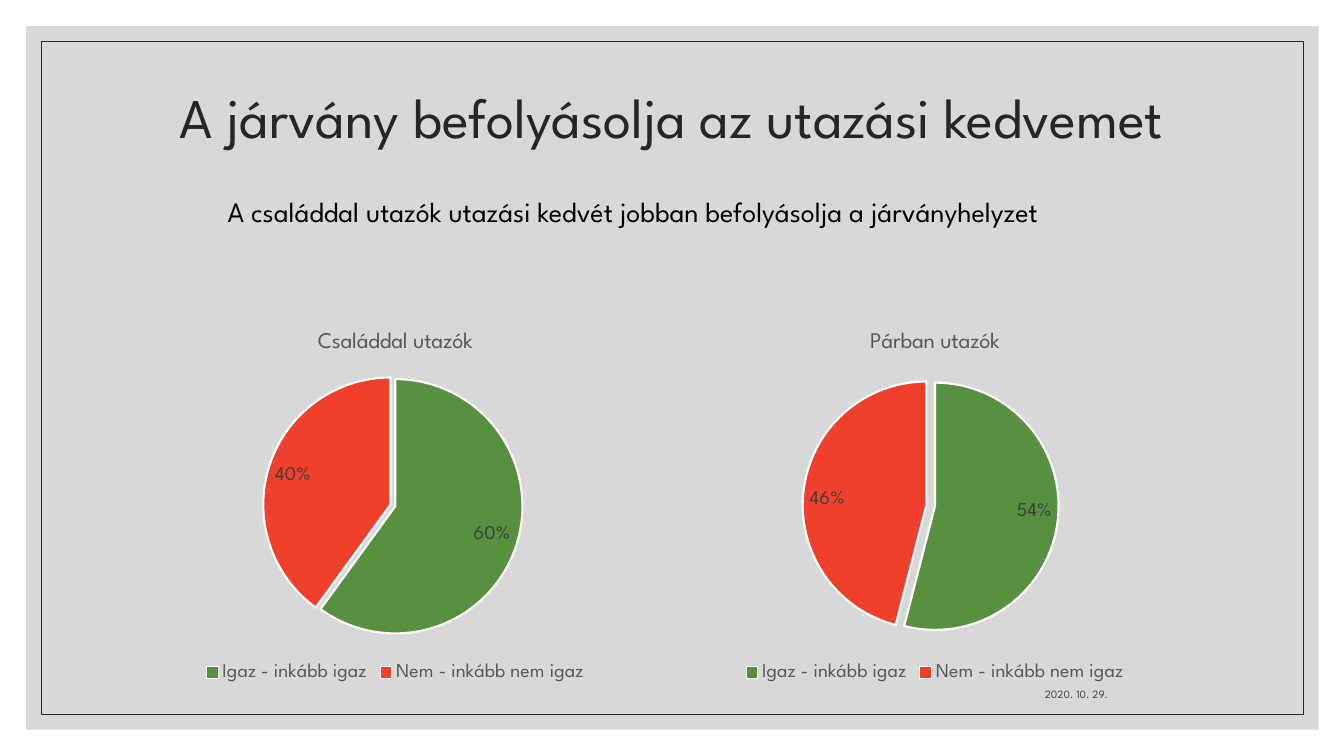
from dataclasses import dataclass

import pptx
import pptx.chart.chart
import pptx.chart.data
import pptx.dml.color
import pptx.enum.chart
import pptx.enum.shapes
import pptx.enum.text
import pptx.oxml
import pptx.oxml.ns
import pptx.shapes.autoshape
import pptx.slide
import pptx.util

PX = 9525
FONT = "League Spartan"
ANSWERS = {"Igaz - inkább igaz": "57903F", "Nem - inkább nem igaz": "F03F2B"}
ALIGN = pptx.enum.text.PP_ALIGN
ANCHOR = pptx.enum.text.MSO_ANCHOR


@dataclass
class Area:
    left: int
    top: int
    width: int
    height: int

    def emu(self) -> list[int]:
        return [side * PX for side in (self.left, self.top, self.width, self.height)]


@dataclass
class TravellerPie:
    title: str
    left: int
    shares: tuple[float, float]
    explosion: int


PIES = [
    TravellerPie("Családdal utazók", 113, (0.6, 0.4), 4),
    TravellerPie("Párban utazók", 627, (0.54, 0.46), 7),
]


def rgb(colour: str) -> pptx.dml.color.RGBColor:
    return pptx.dml.color.RGBColor.from_string(colour)


def style_font(font, size: int, colour: str) -> None:
    font.name = FONT
    font.size = pptx.util.Pt(size)
    font.bold = False
    font.color.rgb = rgb(colour)


def add_text(page: pptx.slide.Slide, area: Area, text: str, *, size: int, colour: str,
             align=ALIGN.CENTER, anchor=ANCHOR.TOP, line_spacing: float = 1.0) -> None:
    frame = page.shapes.add_textbox(*area.emu()).text_frame
    frame.word_wrap = True
    frame.vertical_anchor = anchor
    para = frame.paragraphs[0]
    para.alignment = align
    para.line_spacing = line_spacing
    span = para.add_run()
    span.text = text
    style_font(span.font, size, colour)


def add_rectangle(page: pptx.slide.Slide, area: Area) -> pptx.shapes.autoshape.Shape:
    box = page.shapes.add_shape(pptx.enum.shapes.MSO_SHAPE.RECTANGLE, *area.emu())
    box.shadow.inherit = False
    return box


def add_frame(page: pptx.slide.Slide) -> None:
    panel = add_rectangle(page, Area(25, 25, 1231, 670))
    panel.fill.solid()
    panel.fill.fore_color.rgb = rgb("BFBFBF")
    panel.line.fill.background()
    tint = panel.fill._xPr.find(".//" + pptx.oxml.ns.qn("a:srgbClr"))
    alpha = pptx.oxml.parse_xml(f'<a:alpha {pptx.oxml.ns.nsdecls("a")} val="60000"/>')
    tint.append(alpha)

    border = add_rectangle(page, Area(39, 39, 1202, 641))
    border.fill.background()
    border.line.color.rgb = rgb("262626")
    border.line.width = pptx.util.Pt(0.5)


def style_slices(chart: pptx.chart.chart.Chart, explosion: int) -> None:
    """Colour the slices and pull the last one out by a percentage of the radius."""
    series = chart.plots[0].series[0]
    for index, colour in enumerate(ANSWERS.values()):
        look = series.points[index].format
        look.fill.solid()
        look.fill.fore_color.rgb = rgb(colour)
        look.line.color.rgb = rgb("FFFFFF")
        look.line.width = pptx.util.Pt(1.5)
    properties = series._element.xpath("c:dPt/c:spPr")[-1]
    properties.addprevious(pptx.oxml.parse_xml(
        f'<c:explosion {pptx.oxml.ns.nsdecls("c")} val="{explosion}"/>'))


def add_pie(page: pptx.slide.Slide, pie: TravellerPie) -> None:
    data = pptx.chart.data.CategoryChartData(number_format="0%")
    data.categories = list(ANSWERS)
    data.add_series(pie.title, pie.shares)
    chart = page.shapes.add_chart(pptx.enum.chart.XL_CHART_TYPE.PIE,
                                  *Area(pie.left, 298, 527, 355).emu(), data).chart
    style_font(chart.font, 10, "000000")

    chart.has_title = True
    heading = chart.chart_title.text_frame
    heading.text = pie.title
    style_font(heading.paragraphs[0].runs[0].font, 16, "595959")
    chart.chart_title.include_in_layout = False

    chart.has_legend = True
    chart.legend.position = pptx.enum.chart.XL_LEGEND_POSITION.BOTTOM
    chart.legend.include_in_layout = False
    style_font(chart.legend.font, 14, "595959")

    plot = chart.plots[0]
    plot.vary_by_categories = True
    plot.has_data_labels = True
    labels = plot.data_labels
    labels.show_value = True
    labels.show_percentage = False
    labels.number_format = "0%"
    labels.number_format_is_linked = False
    labels.position = pptx.enum.chart.XL_LABEL_POSITION.INSIDE_END
    style_font(labels.font, 14, "404040")
    style_slices(chart, pie.explosion)


def main() -> None:
    deck = pptx.Presentation()
    deck.slide_width = 1280 * PX
    deck.slide_height = 720 * PX
    page = deck.slides.add_slide(deck.slide_layouts[6])

    add_frame(page)
    add_text(page, Area(44, 48, 1191, 133), "A járvány befolyásolja az utazási kedvemet",
             size=40, colour="262626", anchor=ANCHOR.MIDDLE, line_spacing=0.9)
    add_text(page, Area(762, 634, 303, 38), "2020. 10. 29.",
             size=8, colour="404040", align=ALIGN.RIGHT, anchor=ANCHOR.BOTTOM)
    for pie in PIES:
        add_pie(page, pie)
    add_text(page, Area(152, 181, 902, 74),
             "A családdal utazók utazási kedvét jobban befolyásolja a járványhelyzet",
             size=20, colour="000000")

    deck.save("out.pptx")


if __name__ == "__main__":
    main()
